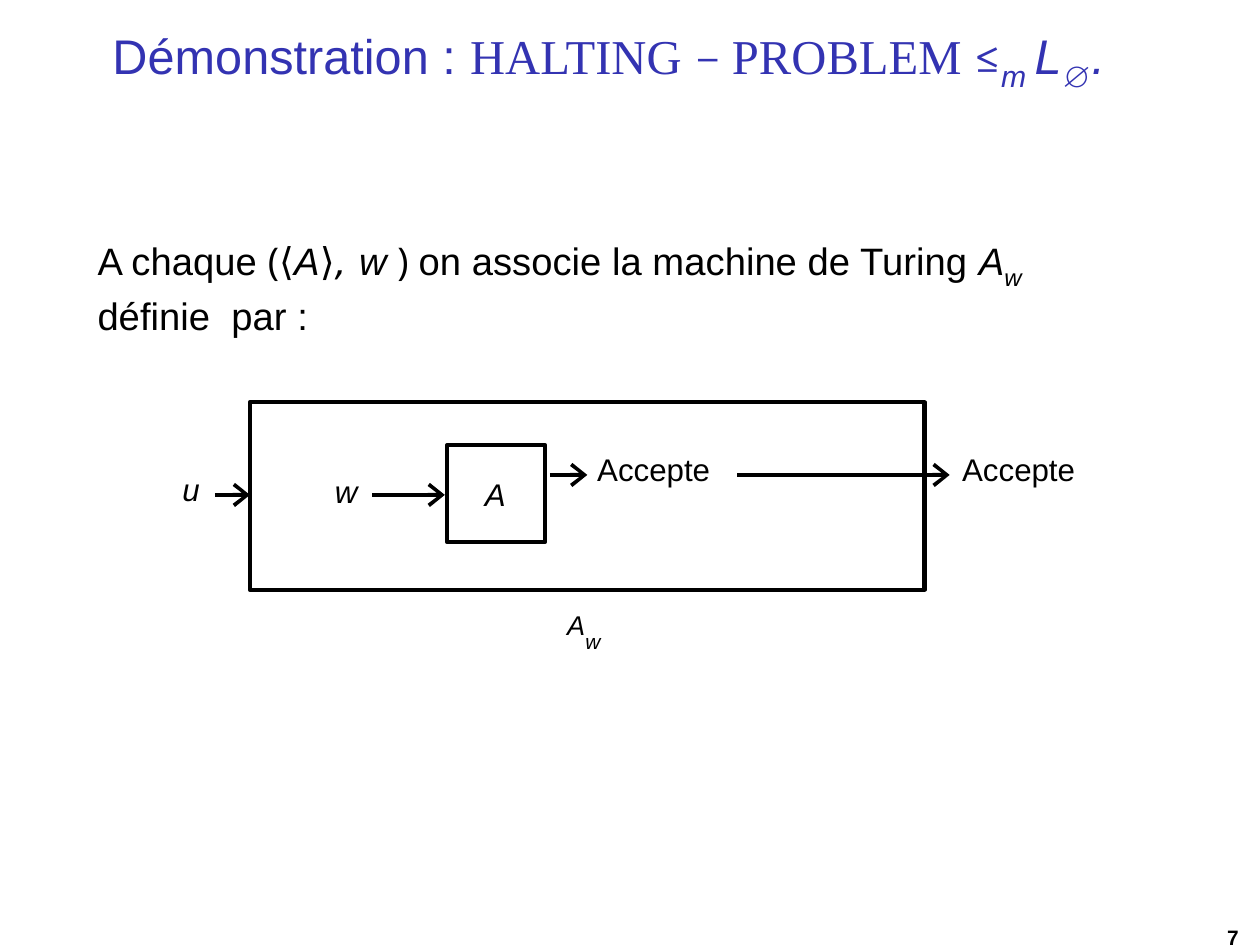
from dataclasses import dataclass
from typing import Optional

from lxml import etree
from pptx import Presentation
from pptx import util as u
from pptx.dml.color import RGBColor
from pptx.enum import shapes, text
from pptx.oxml.ns import qn


@dataclass(frozen=True)
class Theme:
    ink: RGBColor = RGBColor(0, 0, 0)
    title_ink: RGBColor = RGBColor(0x33, 0x33, 0xB2)
    sans: str = "Arial"
    serif: str = "Times New Roman"
    math: str = "Cambria"
    bracket: str = "Open Sans"
    comma: str = "DejaVu Sans"
    title: float = 14
    title_sub: float = 15
    body: float = 11
    body_sub: float = 12
    label: float = 9
    raised: float = 13.5
    small: float = 6
    line: float = 1.19


THEME = Theme()


@dataclass(frozen=True)
class Piece:
    text: str
    size: float
    font: str = THEME.sans
    italic: bool = False
    bold: bool = False
    baseline: int = 0


@dataclass(frozen=True)
class Label:
    left: float
    top: float
    width: float
    height: float
    pieces: tuple[Piece, ...]
    indent: float = 0.01


@dataclass(frozen=True)
class Box:
    left: float
    top: float
    width: float
    height: float


@dataclass(frozen=True)
class Arrow:
    start: float
    end: float
    y: float


T, B, S = THEME.title, THEME.body, THEME.small
TITLE = (
    Piece("Démonstration : ", T),
    Piece("HALTING ", T, THEME.serif),
    Piece("− ", T, THEME.math),
    Piece("PROBLEM ", T, THEME.serif),
    Piece("≤", T, THEME.math),
    Piece("m ", THEME.title_sub, italic=True, baseline=-25),
    Piece("L", T, italic=True),
    Piece("∅", THEME.title_sub, THEME.math, baseline=-25),
    Piece(".", T, italic=True),
)
BODY = (
    Piece("A chaque ", B),
    Piece("(", B, THEME.bracket),
    Piece("⟨", B, THEME.math),
    Piece("A", B, italic=True),
    Piece("⟩", B, THEME.math),
    Piece(", ", B, THEME.comma, italic=True),
    Piece("w ", B, italic=True),
    Piece(") ", B, THEME.bracket),
    Piece("on associe la machine de Turing ", B),
    Piece("A", B, italic=True),
    Piece("w ", THEME.body_sub, italic=True, baseline=-25),
    Piece("définie  par :", B),
)

INPUT_Y, ACCEPT_Y = 1.98, 1.9
ACCEPT = (Piece("Accepte", THEME.label),)
MACHINE_NAME = (Piece("A", THEME.raised, italic=True, baseline=30),
                Piece("w", S, italic=True))

BOXES = (Box(1.0, 1.61, 2.7, 0.75), Box(1.79, 1.78, 0.39, 0.39))
ARROWS = (
    Arrow(0.86, 1.0, INPUT_Y),
    Arrow(1.49, 1.78, INPUT_Y),
    Arrow(2.2, 2.35, ACCEPT_Y),
    Arrow(2.95, 3.8, ACCEPT_Y),
)
LABELS = (
    Label(0.72, 1.87, 0.1, 0.18, (Piece("u", THEME.label, italic=True),)),
    Label(1.33, 1.88, 0.12, 0.18, (Piece("w", THEME.label, italic=True),)),
    Label(1.93, 1.89, 0.11, 0.18, (Piece("A", THEME.label, italic=True),)),
    Label(2.38, 1.79, 0.48, 0.18, ACCEPT),
    Label(3.84, 1.79, 0.48, 0.18, ACCEPT),
    Label(2.23, 2.4, 0.23, 0.18, MACHINE_NAME, 0.04),
    Label(4.87, 3.69, 0.13, 0.13, (Piece("7", S, bold=True),), 0.04),
)


def write(sp, label: Label, inset: float = 0.01, color: RGBColor = THEME.ink,
          spacing: Optional[float] = None, right: float = 0) -> None:
    """Place a text shape and fill its single paragraph with styled runs."""
    sp.left, sp.top = u.Inches(label.left), u.Inches(label.top)
    sp.width, sp.height = u.Inches(label.width), u.Inches(label.height)
    tf = sp.text_frame
    tf.word_wrap = True
    tf.auto_size = text.MSO_AUTO_SIZE.NONE
    tf.vertical_anchor = text.MSO_ANCHOR.TOP
    tf.margin_left = tf.margin_right = tf.margin_bottom = 0
    tf.margin_top = u.Inches(inset)
    p = tf.paragraphs[0]
    p.alignment = text.PP_ALIGN.LEFT
    p.space_before = u.Pt(0)
    p.line_spacing = spacing
    props = p._p.get_or_add_pPr()
    props.set("marL", str(u.Inches(label.indent)))
    props.set("marR", str(u.Inches(right)))
    props.set("indent", "0")
    etree.SubElement(props, qn("a:buNone"))
    for piece in label.pieces:
        r = p.add_run()
        r.text = piece.text
        r.font.size = u.Pt(piece.size)
        r.font.name = piece.font
        r.font.italic, r.font.bold = piece.italic, piece.bold
        r.font.color.rgb = color
        if piece.baseline:
            r._r.get_or_add_rPr().set("baseline", str(piece.baseline * 1000))


def draw_box(slide, box: Box) -> None:
    sp = slide.shapes.add_shape(
        shapes.MSO_SHAPE.RECTANGLE, u.Inches(box.left), u.Inches(box.top),
        u.Inches(box.width), u.Inches(box.height))
    sp.shadow.inherit = False
    sp.fill.background()
    sp.line.color.rgb = THEME.ink
    sp.line.width = u.Pt(THEME.line)


def draw_arrow(slide, arrow: Arrow) -> None:
    line = slide.shapes.add_connector(
        shapes.MSO_CONNECTOR.STRAIGHT, u.Inches(arrow.start),
        u.Inches(arrow.y), u.Inches(arrow.end), u.Inches(arrow.y))
    line.line.color.rgb = THEME.ink
    line.line.width = u.Pt(THEME.line)
    etree.SubElement(line.line._get_or_add_ln(), qn("a:tailEnd"),
                     type="arrow", w="med", len="sm")
    etree.SubElement(line._element.spPr, qn("a:effectLst"))


def main() -> None:
    prs = Presentation()
    prs.slide_width, prs.slide_height = u.Pt(363), u.Pt(272.5)
    slide = prs.slides.add_slide(prs.slide_layouts[1])
    write(slide.shapes.title, Label(0.41, 0.07, 4.22, 0.27, TITLE, 0.04),
          inset=0.02, color=THEME.title_ink)
    write(slide.placeholders[1], Label(0.34, 0.92, 4.26, 0.4, BODY, 0.05),
          spacing=1.03, right=0.3)
    for box in BOXES:
        draw_box(slide, box)
    for arrow in ARROWS:
        draw_arrow(slide, arrow)
    for label in LABELS:
        write(slide.shapes.add_textbox(0, 0, 0, 0), label)
    prs.save("out.pptx")


if __name__ == "__main__":
    main()
